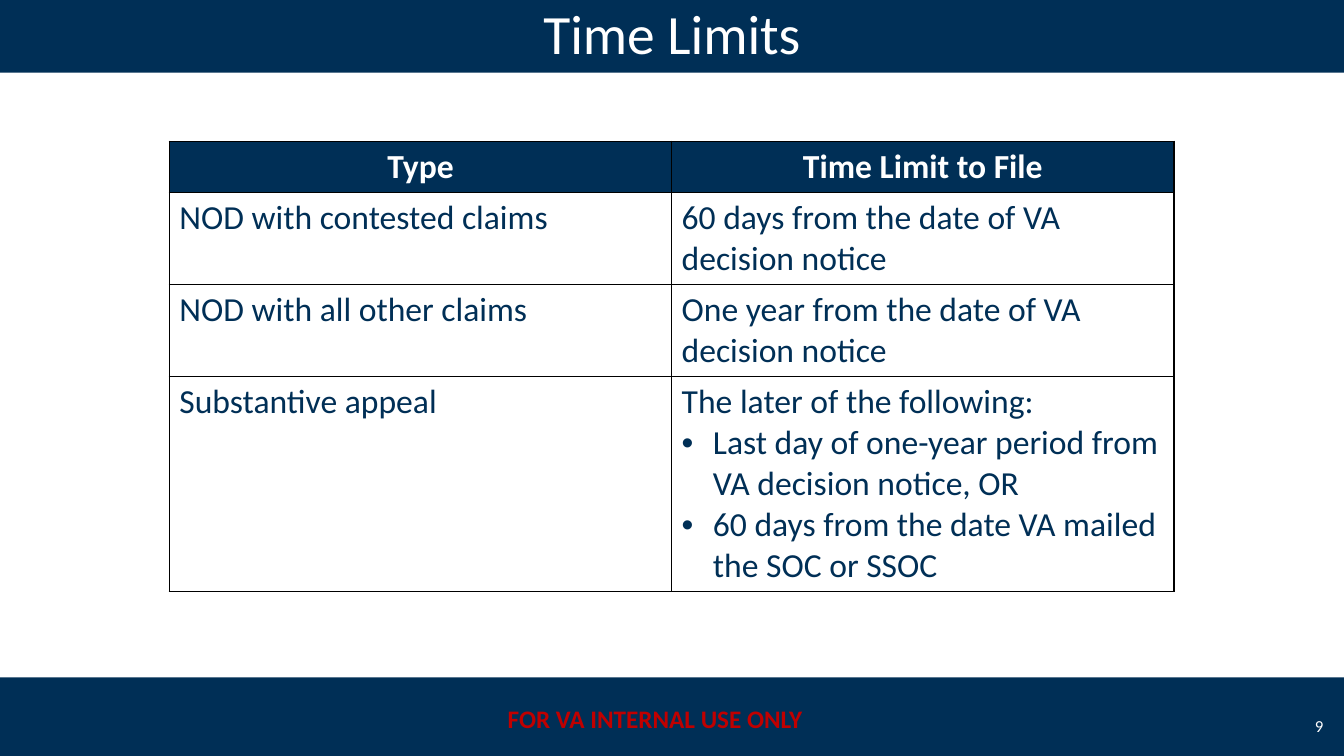
"""Build the Time Limits slide: two bands, a title, a table of filing limits and a footer."""
from dataclasses import dataclass

from lxml import etree
from pptx import Presentation
from pptx.dml.color import RGBColor
from pptx.enum.shapes import MSO_SHAPE
from pptx.enum.text import MSO_ANCHOR, PP_ALIGN
from pptx.oxml.ns import qn
from pptx.util import Inches, Pt

RECTANGLE = MSO_SHAPE.RECTANGLE
MIDDLE = MSO_ANCHOR.MIDDLE
LEFT, CENTER, RIGHT = PP_ALIGN.LEFT, PP_ALIGN.CENTER, PP_ALIGN.RIGHT
NAVY = RGBColor(0x00, 0x2F, 0x56)
WHITE = RGBColor(0xFF, 0xFF, 0xFF)
RED = RGBColor(0xC0, 0x00, 0x00)
BLACK = RGBColor(0x00, 0x00, 0x00)
FONT = "Calibri"
SLIDE_WIDTH, SLIDE_HEIGHT = Inches(13.333), Inches(7.5)
COLUMN, ROW = SLIDE_WIDTH / 40, SLIDE_HEIGHT / 75
BULLET_INDENT = Inches(0.31)


@dataclass(frozen=True)
class Area:
    """A place on the slide, in grid columns and rows."""
    left: float
    top: float
    width: float
    height: float

    def lengths(self) -> tuple[int, int, int, int]:
        """Give left, top, width and height as slide lengths."""
        return (round(self.left * COLUMN), round(self.top * ROW),
                round(self.width * COLUMN), round(self.height * ROW))


@dataclass(frozen=True)
class Style:
    """The look of a paragraph."""
    size: float
    color: RGBColor
    align: PP_ALIGN = LEFT
    bold: bool = False


@dataclass(frozen=True)
class Line:
    """One paragraph of a table cell."""
    text: str
    bullet: bool = False


@dataclass(frozen=True)
class Limit:
    """One row of the table, with its height in grid rows."""
    kind: str
    deadline: tuple[Line, ...]
    height: float


TOP_BAND = Area(0, -0.8, 40, 8)
BOTTOM_BAND = Area(0, 67.2, 40, 8)
FOOTER = Area(13, 69.3, 13, 4)
PAGE_NUMBER = Area(38, 70, 1.68, 4)
TABLE = Area(5.04, 14, 29.9, 44.6)
TITLE_STYLE = Style(39.6, WHITE, CENTER)
FOOTER_STYLE = Style(18, RED, CENTER, True)
NUMBER_STYLE = Style(12, WHITE, RIGHT)
HEADER_STYLE = Style(24, WHITE, CENTER, True)
BODY_STYLE = Style(24, NAVY)
LIMITS = (
    Limit("Type", (Line("Time Limit to File"),), 5.1),
    Limit("NOD with contested claims",
          (Line("60 days from the date of VA decision notice"),), 9.1),
    Limit("NOD with all other claims",
          (Line("One year from the date of VA decision notice"),), 9.1),
    Limit("Substantive appeal",
          (Line("The later of the following:"),
           Line("Last day of one-year period from VA decision notice, OR", True),
           Line("60 days from the date VA mailed the SOC or SSOC", True)), 21.3),
)


def write(frame, lines: tuple[Line, ...], style: Style) -> None:
    """Fill a text frame with paragraphs of one style."""
    frame.word_wrap = True
    frame.text = "\n".join(line.text for line in lines)
    for para, line in zip(frame.paragraphs, lines):
        para.alignment = style.align
        if line.bullet:
            properties = para._p.get_or_add_pPr()
            properties.set("marL", str(BULLET_INDENT))
            properties.set("indent", str(-BULLET_INDENT))
            etree.SubElement(properties, qn("a:buFont"), typeface="Arial")
            etree.SubElement(properties, qn("a:buChar"), char="•")
        font = para.font
        font.name, font.size, font.bold = FONT, Pt(style.size), style.bold
        font.color.rgb = style.color


def add_panel(page, area: Area):
    """Add a plain navy rectangle."""
    panel = page.shapes.add_shape(RECTANGLE, *area.lengths())
    panel.shadow.inherit = False
    panel.fill.solid()
    panel.fill.fore_color.rgb = NAVY
    panel.line.fill.background()
    return panel


def add_borders(cell) -> None:
    """Draw a thin black line on each side of a cell."""
    properties = cell._tc.get_or_add_tcPr()
    for side in ("lnL", "lnR", "lnT", "lnB"):
        border = etree.SubElement(properties, qn(f"a:{side}"), w=str(Pt(1)))
        fill = etree.SubElement(border, qn("a:solidFill"))
        etree.SubElement(fill, qn("a:srgbClr"), val=str(BLACK))


def add_limits(page) -> None:
    """Add the table of filing limits."""
    table = page.shapes.add_table(len(LIMITS), 2, *TABLE.lengths()).table
    table.first_row = table.horz_banding = False
    for index, limit in enumerate(LIMITS):
        table.rows[index].height = round(limit.height * ROW)
        style = BODY_STYLE if index else HEADER_STYLE
        for cell, lines in zip(table.rows[index].cells, ((Line(limit.kind),), limit.deadline)):
            add_borders(cell)
            if index:
                cell.fill.background()
            else:
                cell.fill.solid()
                cell.fill.fore_color.rgb = NAVY
            write(cell.text_frame, lines, style)


def add_title(page) -> None:
    """Place the title over the top band."""
    title = page.shapes.title
    title.left, title.top, title.width, title.height = TOP_BAND.lengths()
    title.text_frame.vertical_anchor = MIDDLE
    write(title.text_frame, (Line("Time Limits"),), TITLE_STYLE)
    page.shapes._spTree.append(title._element)


def main() -> None:
    """Build and save the deck."""
    deck = Presentation()
    deck.slide_width, deck.slide_height = SLIDE_WIDTH, SLIDE_HEIGHT
    page = deck.slides.add_slide(deck.slide_layouts[5])
    for band in (BOTTOM_BAND, TOP_BAND):
        add_panel(page, band)
    footer = add_panel(page, FOOTER)
    write(footer.text_frame, (Line("FOR VA INTERNAL USE ONLY"),), FOOTER_STYLE)
    add_title(page)
    add_limits(page)
    number = page.shapes.add_textbox(*PAGE_NUMBER.lengths())
    number.text_frame.vertical_anchor = MIDDLE
    write(number.text_frame, (Line("9"),), NUMBER_STYLE)
    deck.save("out.pptx")


if __name__ == "__main__":
    main()
